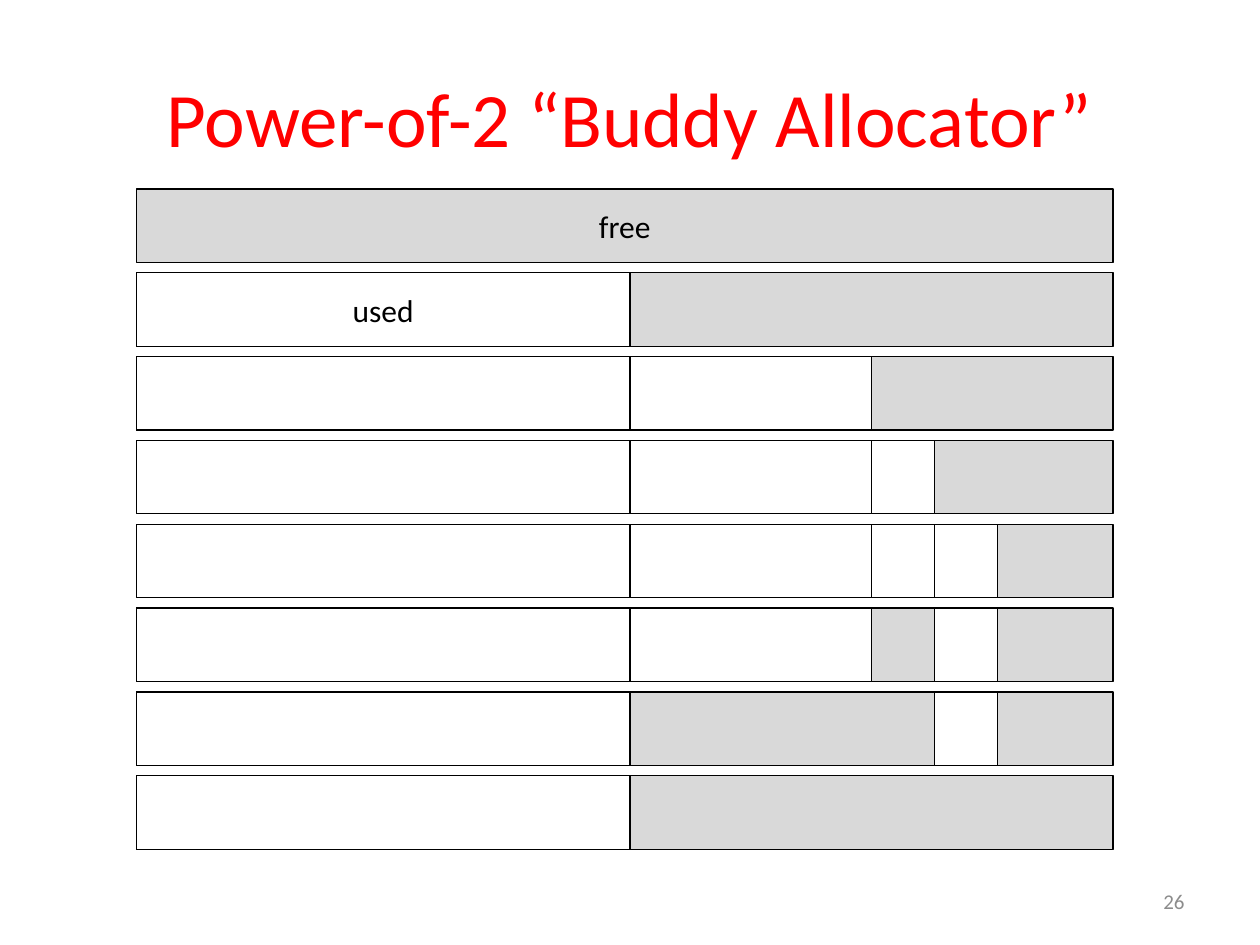
import pptx
import pptx.util
import pptx.dml.color
import pptx.enum.shapes
import pptx.enum.text

Cm = pptx.util.Cm
Pt = pptx.util.Pt
ALIGN = pptx.enum.text.PP_ALIGN

COLORS = {"title": "FF0000", "free": "D9D9D9", "used": "FFFFFF", "ink": "000000", "number": "8C8C8C"}
FONT = "Calibri"

TITLE = "Power-of-2 “Buddy Allocator”"
PAGE_NUMBER = "26"

BLOCKS = {
    "half": (0, 9.95),
    "quarter": (9.95, 4.87),
    "first small": (14.82, 1.27),
    "second small": (16.09, 1.27),
}
STEPS = [
    [],
    ["half"],
    ["half", "quarter"],
    ["half", "quarter", "first small"],
    ["half", "quarter", "first small", "second small"],
    ["half", "quarter", "second small"],
    ["half", "second small"],
    ["half"],
]
LABELS = {(0, "memory"): "free", (1, "half"): "used"}

MEMORY_LEFT, MEMORY_TOP, MEMORY_WIDTH = 2.75, 3.81, 19.69
ROW_HEIGHT, ROW_PITCH = 1.48, 1.69


def color(name):
    return pptx.dml.color.RGBColor.from_string(COLORS[name])


def write(shape, text, size, color_name, alignment):
    frame = shape.text_frame
    frame.text = text
    frame.word_wrap = True
    frame.vertical_anchor = pptx.enum.text.MSO_ANCHOR.MIDDLE
    paragraph = frame.paragraphs[0]
    paragraph.alignment = alignment
    for run in paragraph.runs:
        run.font.name = FONT
        run.font.size = Pt(size)
        run.font.color.rgb = color(color_name)


def add_text(slide, text, box, size, color_name, alignment):
    shape = slide.shapes.add_textbox(*map(Cm, box))
    write(shape, text, size, color_name, alignment)


def add_block(shapes, left, top, width, state, label):
    block = shapes.add_shape(
        pptx.enum.shapes.MSO_SHAPE.RECTANGLE,
        Cm(MEMORY_LEFT + left), Cm(top), Cm(width), Cm(ROW_HEIGHT),
    )
    block.shadow.inherit = False
    block.fill.solid()
    block.fill.fore_color.rgb = color(state)
    block.line.color.rgb = color("ink")
    block.line.width = Pt(0.75)
    if label:
        write(block, label, 18, "ink", ALIGN.CENTER)


def add_step(slide, index, used_blocks):
    shapes = slide.shapes.add_group_shape().shapes if used_blocks else slide.shapes
    top = MEMORY_TOP + index * ROW_PITCH
    add_block(shapes, 0, top, MEMORY_WIDTH, "free", LABELS.get((index, "memory")))
    for name in used_blocks:
        left, width = BLOCKS[name]
        add_block(shapes, left, top, width, "used", LABELS.get((index, name)))


def main():
    presentation = pptx.Presentation()
    presentation.slide_width = Cm(25.4)
    presentation.slide_height = Cm(19.05)
    slide = presentation.slides.add_slide(presentation.slide_layouts[6])
    add_text(slide, TITLE, (1.27, 0.76, 22.86, 3.18), 44, "title", ALIGN.CENTER)
    add_text(slide, PAGE_NUMBER, (18.2, 17.66, 5.93, 1.01), 12, "number", ALIGN.RIGHT)
    for index, used_blocks in enumerate(STEPS):
        add_step(slide, index, used_blocks)
    presentation.save("out.pptx")


if __name__ == "__main__":
    main()
